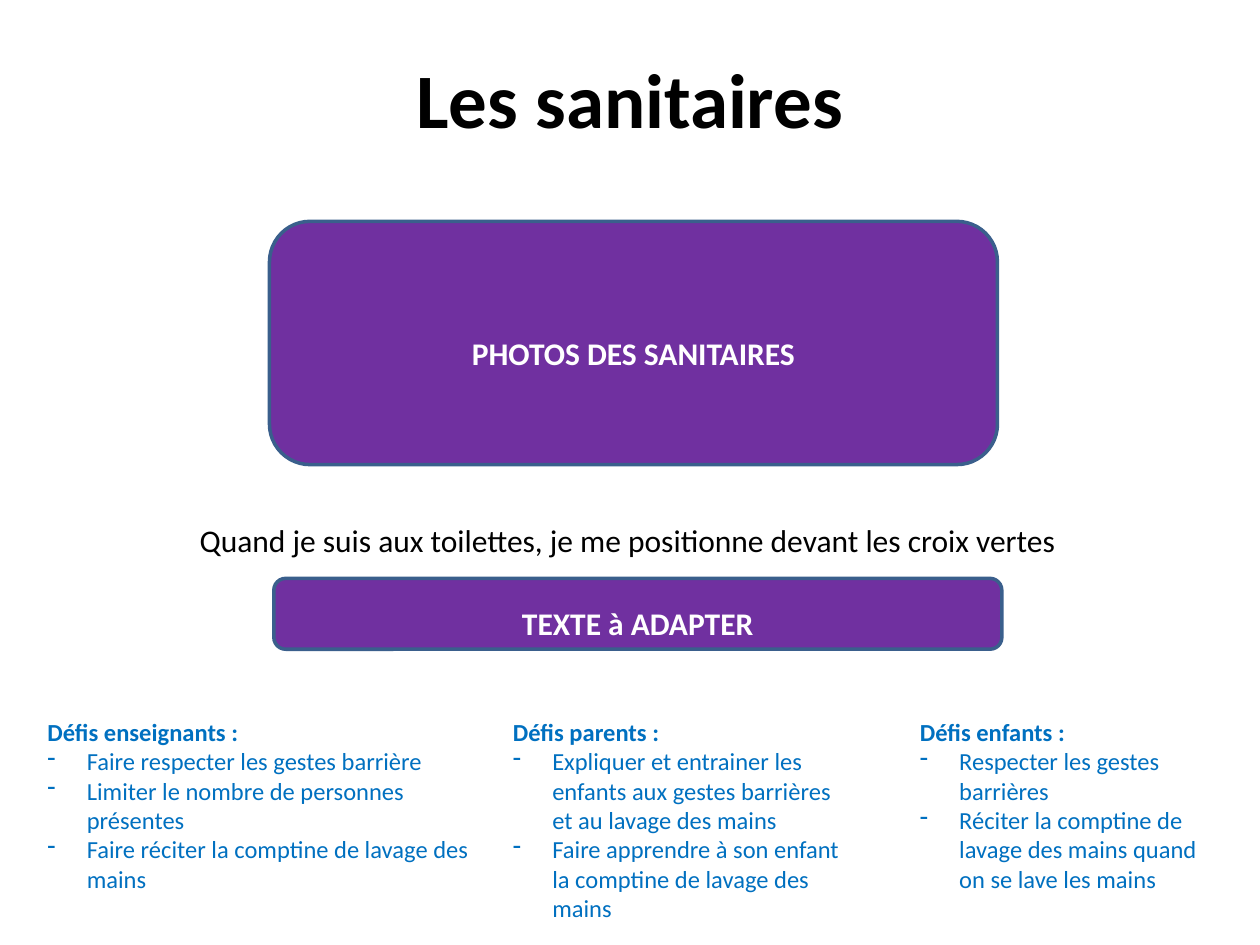
from dataclasses import dataclass

from lxml import etree
from pptx import Presentation
from pptx.dml.color import RGBColor
from pptx.enum.shapes import MSO_SHAPE
from pptx.enum.text import MSO_ANCHOR, PP_ALIGN
from pptx.oxml.ns import qn
from pptx.util import Pt

ROUND = MSO_SHAPE.ROUNDED_RECTANGLE
MIDDLE = MSO_ANCHOR.MIDDLE
LEFT, CENTER = PP_ALIGN.LEFT, PP_ALIGN.CENTER


@dataclass(frozen=True)
class Theme:
    font: str = "Calibri"
    black: str = "000000"
    white: str = "FFFFFF"
    blue: str = "0070C0"
    fill: str = "7030A0"
    edge: str = "3A5F8C"
    title: int = 44
    body: int = 18
    small: int = 14


THEME = Theme()
INDENT = Pt(22.5)
GOALS_TOP = 406

GOALS = [
    (20, 266.5, "Défis enseignants :", [
        "Faire respecter les gestes barrière",
        "Limiter le nombre de personnes présentes",
        "Faire réciter la comptine de lavage des mains",
    ]),
    (286, 209.5, "Défis parents :", [
        "Expliquer et entrainer les enfants aux gestes barrières "
        "et au lavage des mains",
        "Faire apprendre à son enfant la comptine de lavage des mains",
    ]),
    (518.5, 181.5, "Défis enfants :", [
        "Respecter les gestes barrières",
        "Réciter la comptine de lavage des mains quand on se lave les mains",
    ]),
]


def write(para, text, size, color, bold=False, align=LEFT):
    para.text = text
    para.alignment = align
    font = para.font
    font.name = THEME.font
    font.size = Pt(size)
    font.bold = bold
    font.color.rgb = RGBColor.from_string(color)


def add_dash(para):
    props = para._p.get_or_add_pPr()
    props.set("marL", str(INDENT))
    props.set("indent", str(-INDENT))
    mark = etree.Element(qn("a:buChar"), char="-")
    props.insert_element_before(mark, "a:tabLst", "a:defRPr", "a:extLst")


def add_text(slide, x, y, w, h):
    frame = slide.shapes.add_textbox(Pt(x), Pt(y), Pt(w), Pt(h)).text_frame
    frame.word_wrap = True
    return frame


def add_goals(slide, x, w, head, items):
    frame = add_text(slide, x, GOALS_TOP, w, 24 + 17 * len(items))
    write(frame.paragraphs[0], head, THEME.small, THEME.blue, bold=True)
    for item in items:
        para = frame.add_paragraph()
        write(para, item, THEME.small, THEME.blue)
        add_dash(para)


def add_panel(slide, x, y, w, h, text):
    shape = slide.shapes.add_shape(ROUND, Pt(x), Pt(y), Pt(w), Pt(h))
    shape.shadow.inherit = False
    shape.fill.solid()
    shape.fill.fore_color.rgb = RGBColor.from_string(THEME.fill)
    shape.line.color.rgb = RGBColor.from_string(THEME.edge)
    shape.line.width = Pt(2)
    frame = shape.text_frame
    frame.word_wrap = True
    frame.vertical_anchor = MIDDLE
    para = frame.paragraphs[0]
    write(para, text, THEME.body, THEME.white, bold=True, align=CENTER)
    para.line_spacing = 1.5


def main():
    deck = Presentation()
    deck.slide_width, deck.slide_height = Pt(720), Pt(540)
    slide = deck.slides.add_slide(deck.slide_layouts[6])

    title = add_text(slide, 88, 26, 544, 60.5)
    write(title.paragraphs[0], "Les sanitaires", THEME.title, THEME.black,
          bold=True, align=CENTER)
    note = add_text(slide, 107, 294, 567, 29)
    write(note.paragraphs[0],
          "Quand je suis aux toilettes, je me positionne devant les croix vertes",
          THEME.body, THEME.black)

    for goal in GOALS:
        add_goals(slide, *goal)

    add_panel(slide, 154, 126.5, 416, 139, "PHOTOS DES SANITAIRES")
    add_panel(slide, 156.5, 330.5, 416, 40.5, "TEXTE à ADAPTER")
    deck.save("out.pptx")


if __name__ == "__main__":
    main()
